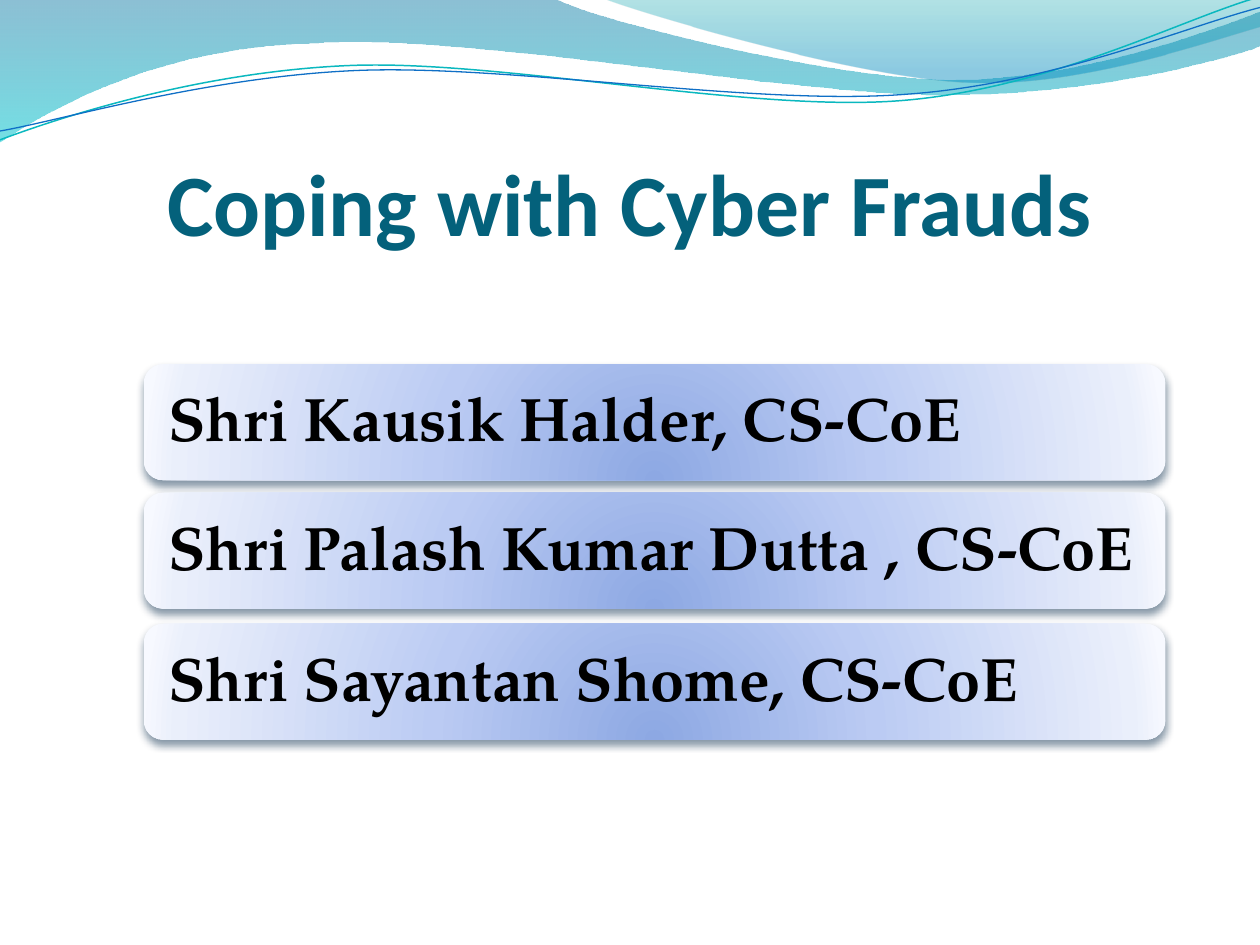
import math

from lxml import etree
from pptx import Presentation
from pptx import util as u
from pptx.dml.color import RGBColor
from pptx.enum import shapes, text
from pptx.oxml import ns

WIDTH, HEIGHT = 10, 7.5
TITLE_TEAL = RGBColor(0x04, 0x61, 0x7B)
BLACK = RGBColor(0, 0, 0)
TEAL_LINE = RGBColor(0x0A, 0xB8, 0xBF)
BLUE_LINE = RGBColor(0x0F, 0x6F, 0xC6)
DEEP_BLUE = RGBColor(0x00, 0x74, 0xA1)
AQUA = RGBColor(0x00, 0xC6, 0xCF)
SEA_GREEN = RGBColor(0x00, 0xA1, 0xA9)
SKY_BLUE = RGBColor(0x00, 0x8B, 0xBF)
SHADOW = RGBColor(0x04, 0x27, 0x47)
# Gradient stops: position, colour, opacity (all in percent)
CARD_STOPS = [(0, RGBColor(0x8D, 0xA8, 0xE3), 100), (43, RGBColor(0xBB, 0xCB, 0xF3), 100),
              (93, RGBColor(0xEA, 0xEF, 0xFB), 100), (100, RGBColor(0xF7, 0xF9, 0xFF), 100)]
DOWNWARD = '<a:lin ang="5400000" scaled="0"/>'
FROM_BELOW = ('<a:path path="circle"><a:fillToRect l="50000" t="130000" '
              'r="50000" b="-30000"/></a:path>')

# Waves: a start point, then line ends (2 numbers) or Bezier curves (6 numbers)
BROAD_WAVE = [(0, 0), (4.4, -0.01), (4.76, 0.17, 6.64, 0.63, 7.58, 0.63),
              (8.53, 0.63, 9.58, 0.26, 10, 0.09), (10.01, 0.36),
              (9.83, 0.44, 8.7, 0.76, 7.46, 0.75), (6.22, 0.75, 3.82, 0.28, 2.57, 0.34),
              (1.29, 0.36, 0.46, 0.83, -0.01, 1.13)]
CORNER_WAVE = [(4.79, -0.01), (5.09, 0.11, 6.82, 0.62, 7.69, 0.65),
               (8.56, 0.69, 9.61, 0.32, 10, 0.21), (10, 0)]
TEAL_CURVE = [(0, 1.11), (0.48, 0.93, 1.58, 0.57, 2.77, 0.52),
              (3.95, 0.47, 5.93, 0.89, 7.13, 0.8), (8.33, 0.71, 9.38, 0.15, 9.98, -0.02)]
BLUE_CURVE = [(0, 1.04), (0.47, 0.96, 1.64, 0.61, 2.83, 0.56),
              (4.03, 0.51, 5.97, 0.84, 7.17, 0.75), (8.36, 0.67, 9.41, 0.21, 10, 0.06)]
CURVE_TILT = -2.7

SPEAKERS = {2.89: "Shri Kausik Halder, CS-CoE",
            3.91: "Shri Palash Kumar Dutta , CS-CoE",
            4.95: "Shri Sayantan Shome, CS-CoE"}
CARD_LEFT, CARD_WIDTH, CARD_HEIGHT = 1.14, 8.11, 0.92


def colour_xml(colour, opacity):
    return f'<a:srgbClr val="{colour}"><a:alpha val="{opacity * 1000}"/></a:srgbClr>'


def drawing(tag, attributes, content):
    return etree.fromstring(f'<a:{tag} {ns.nsdecls("a")} {attributes}>{content}</a:{tag}>')


def gradient_fill(shape, stops, direction):
    shape.fill.gradient()
    old = shape._element.spPr.find(ns.qn("a:gradFill"))
    stop_xml = "".join(f'<a:gs pos="{pos * 1000}">{colour_xml(colour, opacity)}</a:gs>'
                       for pos, colour, opacity in stops)
    new = drawing("gradFill", 'rotWithShape="1"', f"<a:gsLst>{stop_xml}</a:gsLst>{direction}")
    old.getparent().replace(old, new)


def drop_shadow(shape):
    effects = shape._element.spPr.find(ns.qn("a:effectLst"))
    effects.append(drawing("outerShdw", f'blurRad="{u.Pt(4.5)}" dist="{u.Pt(3)}" dir="5400000" '
                           'algn="ctr" rotWithShape="0"', colour_xml(SHADOW, 48)))


def turn(point, pivot, degrees):
    angle = math.radians(degrees)
    dx, dy = point[0] - pivot[0], point[1] - pivot[1]
    return (pivot[0] + dx * math.cos(angle) - dy * math.sin(angle),
            pivot[1] + dx * math.sin(angle) + dy * math.cos(angle))


def add_outline(slide, segments, close, pivot=(0, 0), tilt=0):
    """Draw all nodes as lines, then join each three nodes of a curve into one Bezier."""
    nodes = [turn(segment[i:i + 2], pivot, -tilt)
             for segment in segments for i in range(0, len(segment), 2)]
    nodes = [(u.Inches(x), u.Inches(y)) for x, y in nodes]
    builder = slide.shapes.build_freeform(*nodes[0])
    builder.add_line_segments(nodes[1:], close=close)
    outline = builder.convert_to_shape()
    outline.shadow.inherit = False
    outline.rotation = tilt

    lines = iter(list(outline._element.iter(ns.qn("a:lnTo"))))
    for segment in segments[1:]:
        first = next(lines)
        if len(segment) == 6:
            bezier = etree.Element(ns.qn("a:cubicBezTo"))
            first.addprevious(bezier)
            for line in (first, next(lines), next(lines)):
                bezier.append(line[0])
                line.getparent().remove(line)
    return outline


def add_wave(slide, segments, stops):
    wave = add_outline(slide, segments, close=True)
    gradient_fill(wave, stops, DOWNWARD)
    wave.line.fill.background()


def add_curve(slide, segments, pivot, colour, weight):
    curve = add_outline(slide, segments, close=False, pivot=pivot, tilt=CURVE_TILT)
    curve.fill.background()
    curve.line.color.rgb = colour
    curve.line.width = u.Pt(weight)


def write(shape, words, *, size, font, colour, align, anchor, insets, spacing=1.0):
    frame = shape.text_frame
    frame.word_wrap = True
    frame.auto_size = text.MSO_AUTO_SIZE.NONE
    frame.vertical_anchor = anchor
    (frame.margin_left, frame.margin_top,
     frame.margin_right, frame.margin_bottom) = (u.Inches(inset) for inset in insets)
    paragraph = frame.paragraphs[0]
    paragraph.alignment = align
    paragraph.line_spacing = spacing
    run = paragraph.add_run()
    run.text = words
    run.font.size = u.Pt(size)
    run.font.name = font
    run.font.bold = True
    run.font.color.rgb = colour


def add_title(slide, words):
    title = slide.shapes.title
    title.left, title.top = u.Inches(0.05 * WIDTH), u.Inches(0.77)
    title.width, title.height = u.Inches(0.9 * WIDTH), u.Inches(HEIGHT / 6)
    write(title, words, size=50, font="Calibri", colour=TITLE_TEAL,
          align=text.PP_ALIGN.CENTER, anchor=text.MSO_ANCHOR.BOTTOM, insets=(0, 0.05, 0, 0))


def add_speaker(slide, top, name):
    card = slide.shapes.add_shape(
        shapes.MSO_SHAPE.ROUNDED_RECTANGLE, u.Inches(CARD_LEFT), u.Inches(top),
        u.Inches(CARD_WIDTH), u.Inches(CARD_HEIGHT))
    card.shadow.inherit = False
    gradient_fill(card, CARD_STOPS, FROM_BELOW)
    card.line.fill.background()
    drop_shadow(card)
    write(card, name, size=35, font="TeX Gyre Pagella", colour=BLACK, spacing=0.9,
          align=text.PP_ALIGN.LEFT, anchor=text.MSO_ANCHOR.MIDDLE, insets=(0.15,) * 4)


def main():
    deck = Presentation()
    deck.slide_width, deck.slide_height = u.Inches(WIDTH), u.Inches(HEIGHT)
    slide = deck.slides.add_slide(deck.slide_layouts[5])

    # Waves along the top edge
    add_wave(slide, BROAD_WAVE, [(0, DEEP_BLUE, 45), (100, AQUA, 55)])
    add_wave(slide, CORNER_WAVE, [(0, SEA_GREEN, 30), (80, SKY_BLUE, 45)])
    add_curve(slide, TEAL_CURVE, (4.99, 0.58), TEAL_LINE, 0.85)
    add_curve(slide, BLUE_CURVE, (5, 0.59), BLUE_LINE, 0.75)

    # Title and speakers
    add_title(slide, "Coping with Cyber Frauds")
    for top, name in SPEAKERS.items():
        add_speaker(slide, top, name)

    deck.save("out.pptx")


if __name__ == "__main__":
    main()
